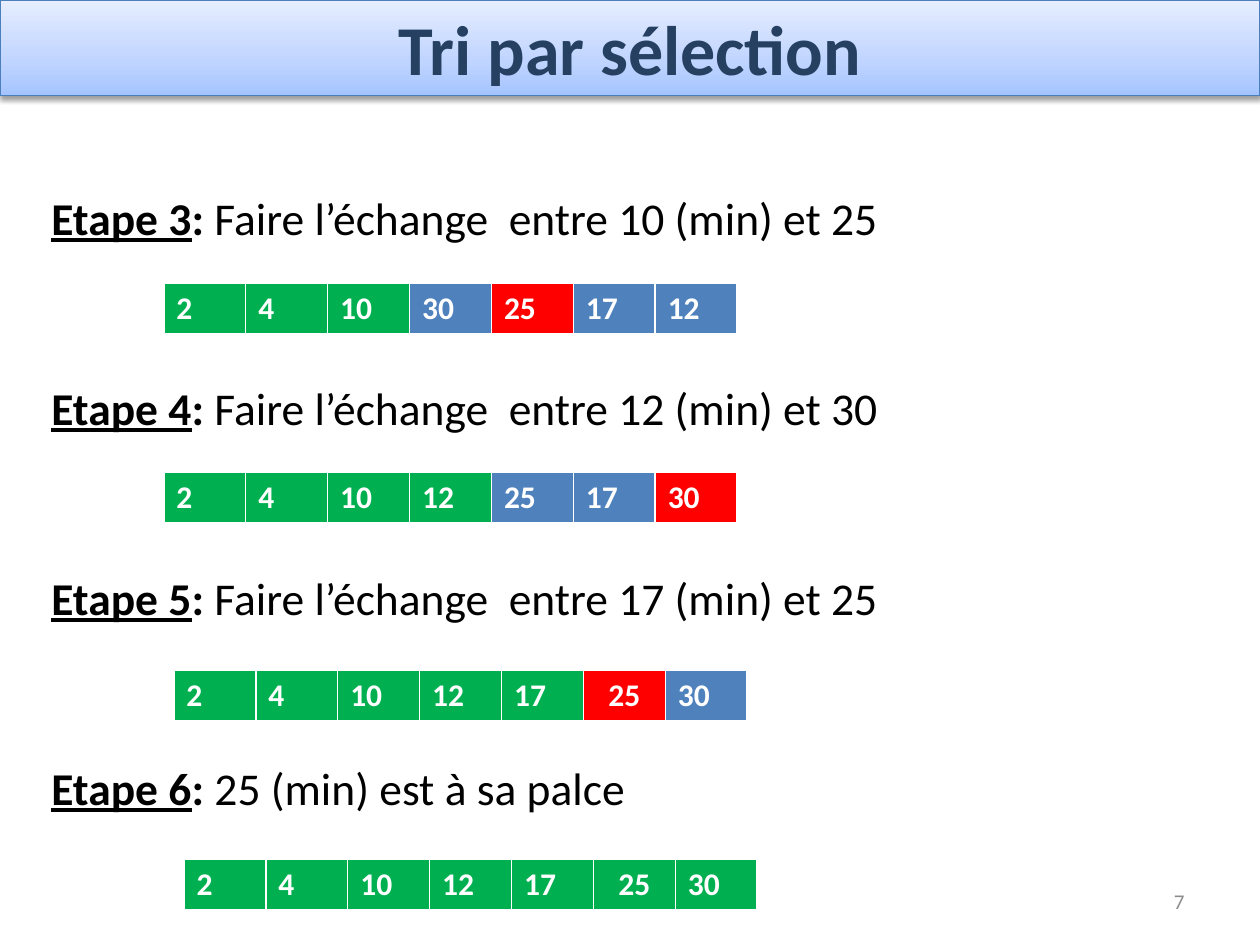
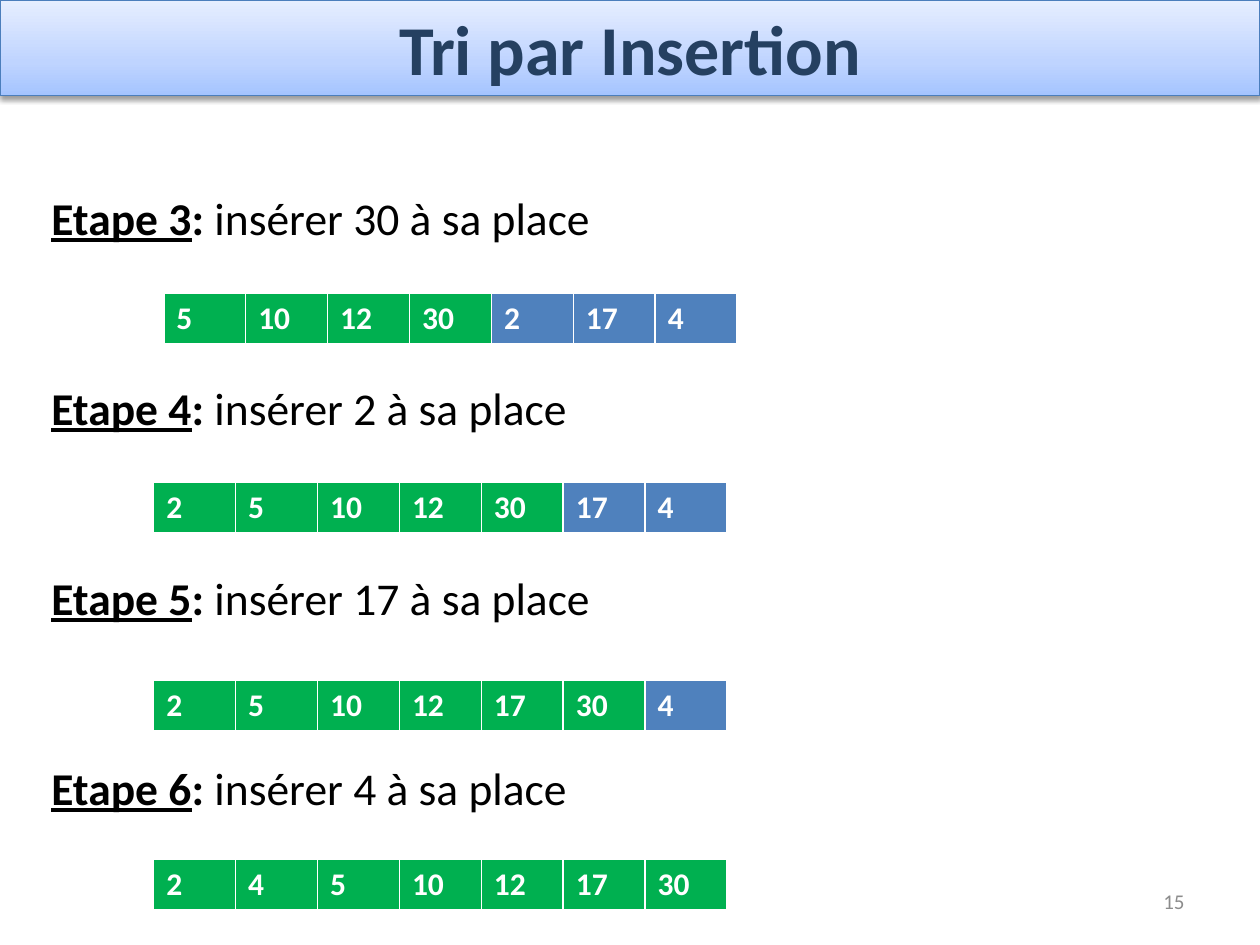
import lxml.etree
import pptx
import pptx.dml.color
import pptx.enum.text
import pptx.oxml
import pptx.oxml.ns
import pptx.util

SLIDES = [
    {"title": "Tri par sélection", "page": "7", "steps": [
        ("Etape 3", "Faire l’échange  entre 10 (min) et 25",
         (1.3, 2.25), [2, 4, 10, 30, 25, 17, 12], "dddtstt", None),
        ("Etape 4", "Faire l’échange  entre 12 (min) et 30",
         (1.3, 3.75), [2, 4, 10, 12, 25, 17, 30], "ddddtts", None),
        ("Etape 5", "Faire l’échange  entre 17 (min) et 25",
         (1.38, 5.32), [2, 4, 10, 12, 17, 25, 30], "dddddst", 5),
        ("Etape 6", "25 (min) est à sa palce",
         (1.46, 6.82), [2, 4, 10, 12, 17, 25, 30], "ddddddd", 5),
    ]},
    {"title": "Tri par Insertion", "page": "15", "steps": [
        ("Etape 3", "insérer 30 à sa place",
         (1.3, 2.33), [5, 10, 12, 30, 2, 17, 4], "ddddttt", None),
        ("Etape 4", "insérer 2 à sa place",
         (1.22, 3.83), [2, 5, 10, 12, 30, 17, 4], "dddddtt", None),
        ("Etape 5", "insérer 17 à sa place",
         (1.22, 5.4), [2, 5, 10, 12, 17, 30, 4], "ddddddt", None),
        ("Etape 6", "insérer 4 à sa place",
         (1.22, 6.82), [2, 4, 5, 10, 12, 17, 30], "ddddddd", None),
    ]},
]

THEME = {
    "font": "Calibri",
    "size": {"title": 40, "step": 26, "cell": 18, "page": 12},
    "ink": {"title": "254061", "step": "000000", "cell": "FFFFFF", "page": "8C8C8C"},
    "state": {"d": "00B050", "t": "4F81BD", "s": "FF0000"},
    "band": [(0, "A4C4FF"), (35, "BFD4FF"), (100, "E6EEFF")],
    "edge": "4B7EBC",
}
CELL_W, CELL_H = 0.65, 0.41
STEP_GAP = 77.4

Inches, Pt = pptx.util.Inches, pptx.util.Pt
ALIGN = pptx.enum.text.PP_ALIGN
MIDDLE = pptx.enum.text.MSO_ANCHOR.MIDDLE


def color(code):
    return pptx.dml.color.RGBColor.from_string(code)


def style(para, role, bold=False, align=ALIGN.LEFT):
    font = para.font
    font.name = THEME["font"]
    font.size = Pt(THEME["size"][role])
    font.color.rgb = color(THEME["ink"][role])
    font.bold = bold
    para.alignment = align


def add_xml(parent, body):
    tag, rest = body.split(" ", 1)
    space = pptx.oxml.ns.nsdecls("a")
    parent.append(pptx.oxml.parse_xml(f"<{tag} {space} {rest}"))


def box(slide, *place):
    shape = slide.shapes.add_textbox(*map(Inches, place))
    shape.text_frame.word_wrap = True
    return shape.text_frame


def draw_title(slide, text):
    band = slide.shapes.title
    band.left, band.top, band.width, band.height = map(Inches, (0, 0, 10, 0.76))
    frame = band.text_frame
    frame.text = text
    frame.auto_size = pptx.enum.text.MSO_AUTO_SIZE.NONE
    frame.vertical_anchor = MIDDLE
    style(frame.paragraphs[0], "title", True, ALIGN.CENTER)
    props = band.element.spPr
    add_xml(props, '<a:prstGeom prst="rect"><a:avLst/></a:prstGeom>'[1:])
    stops = "".join(
        f'<a:gs pos="{pos * 1000}"><a:srgbClr val="{code}"/></a:gs>'
        for pos, code in THEME["band"])
    add_xml(props, 'a:gradFill rotWithShape="1"><a:gsLst>' + stops
            + '</a:gsLst><a:lin ang="16200000" scaled="0"/></a:gradFill>')
    band.line.color.rgb = color(THEME["edge"])
    band.line.width = Pt(0.75)
    add_xml(props, 'a:effectLst ><a:outerShdw '
            f'blurRad="{Pt(3.1)}" dist="{Pt(1.6)}" dir="5400000" rotWithShape="0">'
            '<a:srgbClr val="000000"><a:alpha val="38000"/></a:srgbClr>'
            '</a:outerShdw></a:effectLst>')


def draw_steps(slide, steps):
    frame = box(slide, 0.31, 1.46, 9.38, 5.57)
    for num, (name, text, *_) in enumerate(steps):
        para = frame.add_paragraph() if num else frame.paragraphs[0]
        if num:
            para.space_before = Pt(STEP_GAP)
        for part, bold, under in ((name, True, True), (": ", True, False),
                                  (text, False, False)):
            run = para.add_run()
            run.text = part
            run.font.bold = bold
            run.font.underline = under
        style(para, "step")


def draw_row(slide, place, values, states, middle):
    count = len(values)
    left, top = place
    table = slide.shapes.add_table(
        1, count, Inches(left), Inches(top),
        Inches(CELL_W * count), Inches(CELL_H)).table
    table.first_row = table.horz_banding = False
    for col, (value, state) in enumerate(zip(values, states)):
        table.columns[col].width = Inches(CELL_W)
        cell = table.cell(0, col)
        cell.text = str(value)
        align = ALIGN.CENTER if col == middle else ALIGN.LEFT
        style(cell.text_frame.paragraphs[0], "cell", True, align)
        props = cell._tc.get_or_add_tcPr()
        for side, width in zip("LRTB", (1, 1, 1, 3)):
            add_xml(props, f'a:ln{side} w="{Pt(width)}"><a:solidFill>'
                    f'<a:srgbClr val="{THEME["ink"]["cell"]}"/></a:solidFill></a:ln{side}>')
        cell.fill.solid()
        cell.fill.fore_color.rgb = color(THEME["state"][state])


def draw_page(slide, page):
    frame = box(slide, 7.17, 6.95, 2.33, 0.4)
    frame.vertical_anchor = MIDDLE
    frame.text = page
    style(frame.paragraphs[0], "page", align=ALIGN.RIGHT)


def add_xml(parent, body):
    tag, rest = body.split(" ", 1)
    space = pptx.oxml.ns.nsdecls("a")
    parent.append(pptx.oxml.parse_xml(f"<{tag} {space} {rest}"))


def main():
    deck = pptx.Presentation()
    deck.slide_width, deck.slide_height = Inches(10), Inches(7.5)
    for data in SLIDES:
        slide = deck.slides.add_slide(deck.slide_layouts[5])
        draw_title(slide, data["title"])
        draw_steps(slide, data["steps"])
        draw_page(slide, data["page"])
        for _, _, *row in data["steps"]:
            draw_row(slide, *row)
    deck.save("out.pptx")


if __name__ == "__main__":
    main()
